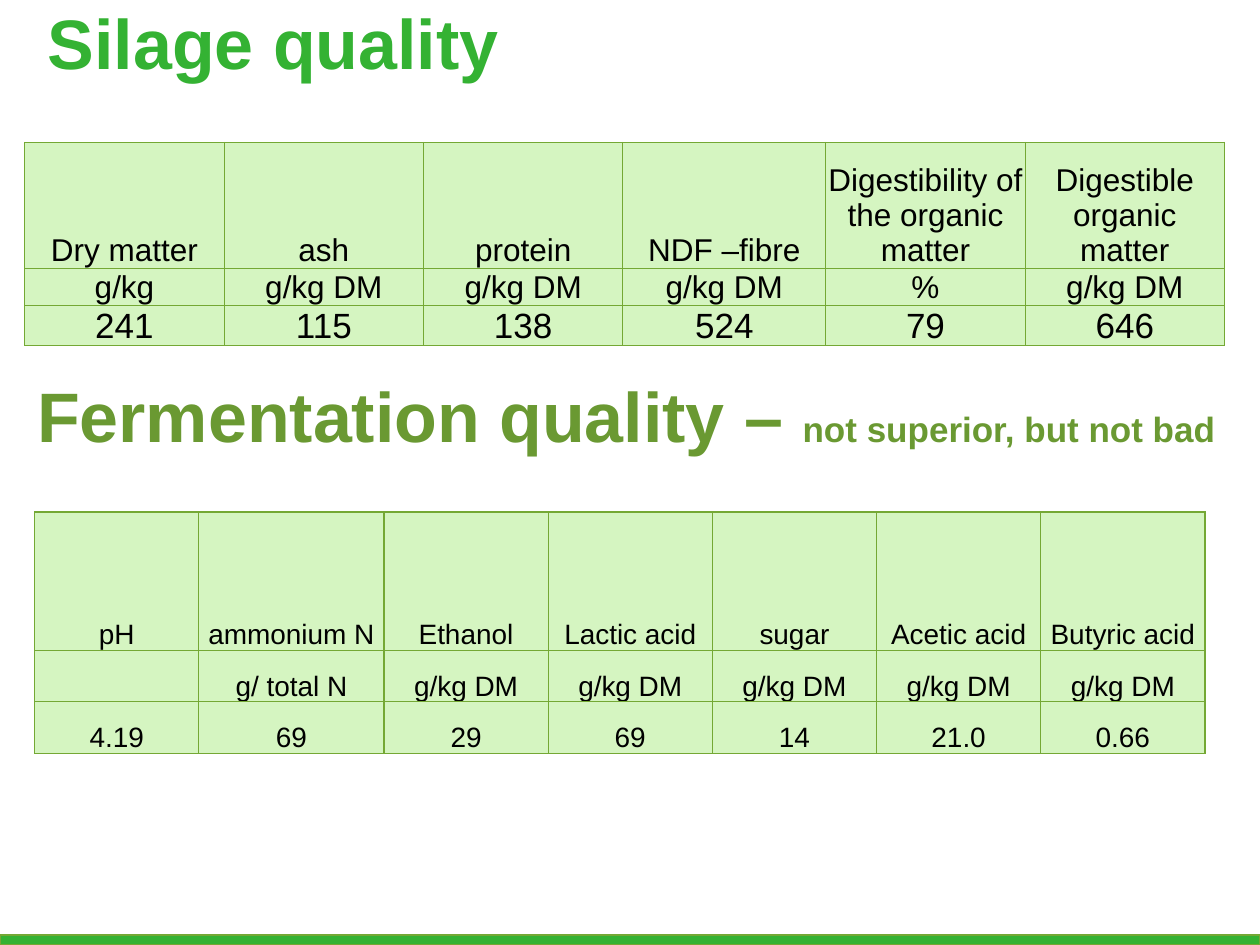
from lxml import etree
from pptx import Presentation
from pptx.dml.color import RGBColor
from pptx.enum.shapes import MSO_SHAPE
from pptx.enum.text import MSO_ANCHOR, PP_ALIGN
from pptx.oxml.ns import qn
from pptx.util import Cm, Pt

LEFT, CENTER = PP_ALIGN.LEFT, PP_ALIGN.CENTER
TOP, BOTTOM = MSO_ANCHOR.TOP, MSO_ANCHOR.BOTTOM
RECT = MSO_SHAPE.RECTANGLE

BLACK = RGBColor(0x00, 0x00, 0x00)
GREEN = RGBColor(0x34, 0xB2, 0x33)
OLIVE = RGBColor(0x6A, 0x99, 0x32)
EDGE = RGBColor(0x74, 0xA8, 0x34)
PALE = RGBColor(0xD5, 0xF5, 0xC1)

SILAGE = [
    ["Dry matter", "ash", "protein", "NDF –fibre",
     "Digestibility of the organic matter", "Digestible organic matter"],
    ["g/kg", "g/kg DM", "g/kg DM", "g/kg DM", "%", "g/kg DM"],
    ["241", "115", "138", "524", "79", "646"],
]
FERMENT = [
    ["pH", "ammonium N", "Ethanol", "Lactic acid", "sugar", "Acetic acid",
     "Butyric acid"],
    ["", "g/ total N"] + ["g/kg DM"] * 5,
    ["4.19", "69", "29", "69", "14", "21.0", "0.66"],
]


def style(font, size, color, bold):
    font.name = "Arial"
    font.size = Pt(size)
    font.bold = bold
    font.color.rgb = color


def write(frame, *parts, color=BLACK, bold=False, align=LEFT, anchor=TOP,
          space=None):
    frame.word_wrap = True
    frame.vertical_anchor = anchor
    para = frame.paragraphs[0]
    para.alignment = align
    if space:
        para.line_spacing = Pt(space)
    for text, size in parts:
        if text:
            run = para.add_run()
            run.text = text
            style(run.font, size, color, bold)
        else:
            style(para.font, size, color, bold)


def place(shape, left, top, width, height):
    shape.left, shape.top = Cm(left), Cm(top)
    shape.width, shape.height = Cm(width), Cm(height)


def border(cell):
    props = cell._tc.get_or_add_tcPr()
    for side in ("a:lnL", "a:lnR", "a:lnT", "a:lnB"):
        line = etree.SubElement(props, qn(side), w=str(Pt(0.75)))
        fill = etree.SubElement(line, qn("a:solidFill"))
        etree.SubElement(fill, qn("a:srgbClr"), val=str(EDGE))


def add_grid(slide, data, left, top, widths, heights, sizes):
    frame = slide.shapes.add_table(
        len(data), len(widths), Cm(left), Cm(top),
        Cm(sum(widths)), Cm(sum(heights)))
    table = frame.table
    table.first_row = table.horz_banding = False
    for col, width in zip(table.columns, widths):
        col.width = Cm(width)
    for row, height, texts, size in zip(table.rows, heights, data, sizes):
        row.height = Cm(height)
        for cell, text in zip(row.cells, texts):
            border(cell)
            cell.fill.solid()
            cell.fill.fore_color.rgb = PALE
            cell.margin_left = cell.margin_right = cell.margin_top = Cm(0.03)
            cell.margin_bottom = 0
            cell.vertical_anchor = BOTTOM
            write(cell.text_frame, (text, size), align=CENTER, anchor=BOTTOM)


def add_bar(slide):
    bar = slide.shapes.add_shape(RECT, 0, Cm(18.85), Cm(25.4), Cm(0.2))
    bar.shadow.inherit = False
    bar.fill.solid()
    bar.fill.fore_color.rgb = GREEN
    bar.line.color.rgb = EDGE
    bar.line.width = Pt(0.75)


def main():
    deck = Presentation()
    deck.slide_width, deck.slide_height = Cm(25.4), Cm(19.05)
    slide = deck.slides.add_slide(deck.slide_layouts[5])
    add_bar(slide)
    add_grid(slide, SILAGE, 0.5, 2.87, [4.02] * 3 + [4.09] + [4.02] * 2,
             [2.54, 0.71, 0.71], [18, 18, 20])
    title = slide.shapes.title
    place(title, 0.71, 0, 20.3, 5.3)
    write(title.text_frame, ("Silage quality", 40),
          color=GREEN, bold=True, space=44)
    box = slide.shapes.add_textbox(Cm(0.5), Cm(7.52), Cm(24.9), Cm(5.3))
    write(box.text_frame, ("Fermentation quality – ", 40),
          ("not superior, but not bad", 20),
          color=OLIVE, bold=True, space=44)
    add_grid(slide, FERMENT, 0.7, 10.32, [3.31, 3.73] + [3.31] * 5,
             [2.79, 1.04, 1.04], [16] * 3)
    deck.save("out.pptx")


if __name__ == "__main__":
    main()
